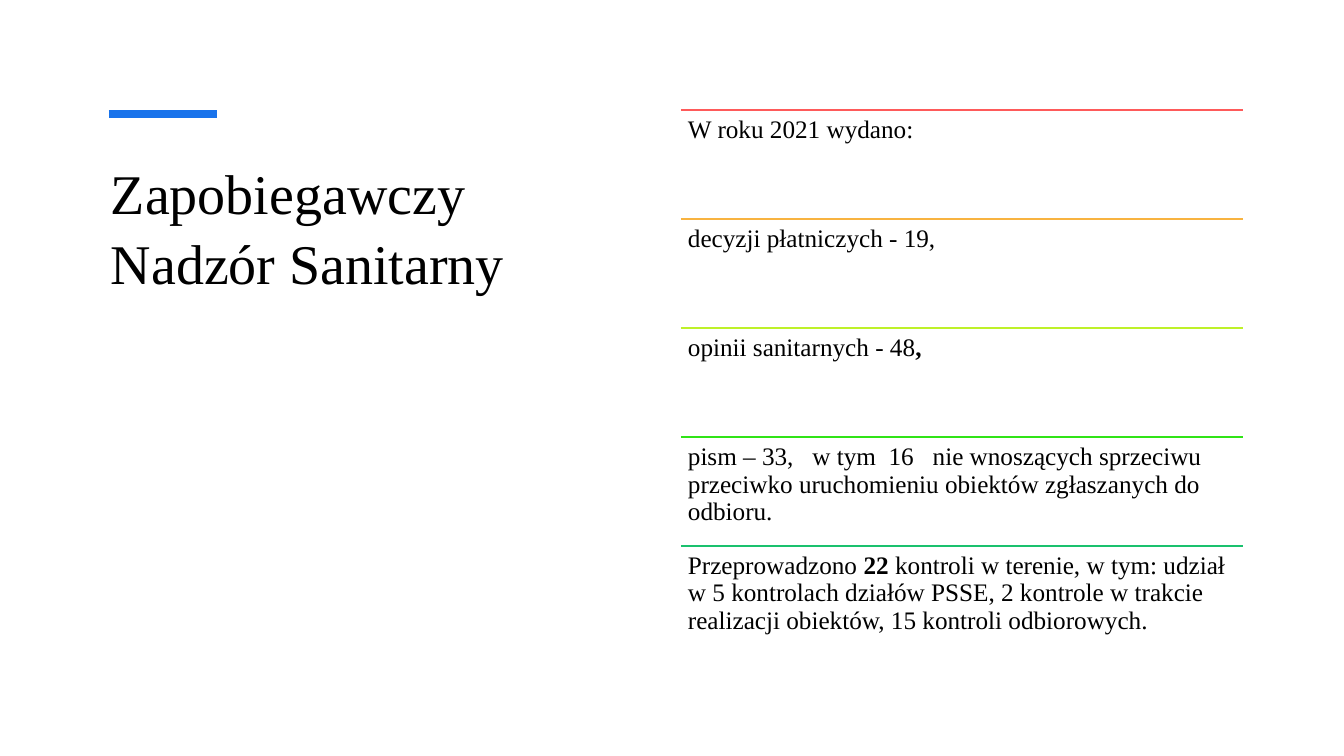
import pptx
import pptx.dml.color
import pptx.enum.shapes
import pptx.oxml
import pptx.util

FONT = "Times New Roman"
LEFT, TOP, WIDTH, STEP = 681, 110, 562, 109
ROWS = [
    ("FE5A5A", [("W roku 2021 wydano:", False)]),
    ("F8B340", [("decyzji płatniczych - 19,", False)]),
    ("BEF129", [("opinii sanitarnych - 48", False), (",", True)]),
    ("30E417", [("pism – 33,   w tym  16   nie wnoszących sprzeciwu "
                 "przeciwko uruchomieniu obiektów zgłaszanych do odbioru.", False)]),
    ("1AC16E", [("Przeprowadzono ", False), ("22 ", True),
                ("kontroli w terenie, w tym: udział w 5 kontrolach działów PSSE, "
                 "2 kontrole w trakcie realizacji obiektów, "
                 "15 kontroli odbiorowych.", False)]),
]


def px(n):
    return pptx.util.Emu(round(n * 914400 / 100.8))


def color(code):
    return pptx.dml.color.RGBColor.from_string(code)


def rule(slide, x, y, width, code, weight):
    line = slide.shapes.add_connector(
        pptx.enum.shapes.MSO_CONNECTOR.STRAIGHT, px(x), px(y), px(x + width), px(y))
    line.line.color.rgb = color(code)
    line.line.width = pptx.util.Pt(weight)
    props = line._element.spPr
    props.append(pptx.oxml.parse_xml(
        '<a:effectLst xmlns:a="http://schemas.openxmlformats.org/drawingml/2006/main"/>'))


def text(slide, box, runs, size, inset, space, after):
    frame = slide.shapes.add_textbox(*map(px, box)).text_frame
    frame.word_wrap = True
    frame.margin_left = frame.margin_right = px(inset[0])
    frame.margin_top = frame.margin_bottom = px(inset[1])
    para = frame.paragraphs[0]
    para.line_spacing = space
    para.space_after = pptx.util.Pt(after)
    para.font.name = FONT
    para.font.size = pptx.util.Pt(size)
    para.font.color.rgb = color("000000")
    for words, bold in runs:
        run = para.add_run()
        run.text = words
        if bold:
            run.font.bold = True


def main():
    deck = pptx.Presentation()
    deck.slide_width, deck.slide_height = px(1344), px(756)
    slide = deck.slides.add_slide(deck.slide_layouts[6])
    text(slide, (101, 151, 500, 354), [("Zapobiegawczy Nadzór Sanitarny", False)],
         40, (10, 5), 1.04, 6)
    rule(slide, 109, 114, 108, "1973EB", 6)
    for i, (code, runs) in enumerate(ROWS):
        y = TOP + i * STEP
        rule(slide, LEFT, y, WIDTH, code, 1)
        text(slide, (LEFT, y, WIDTH, STEP), runs, 18, (7, 7), 0.9, 6)
    deck.save("out.pptx")


if __name__ == "__main__":
    main()
